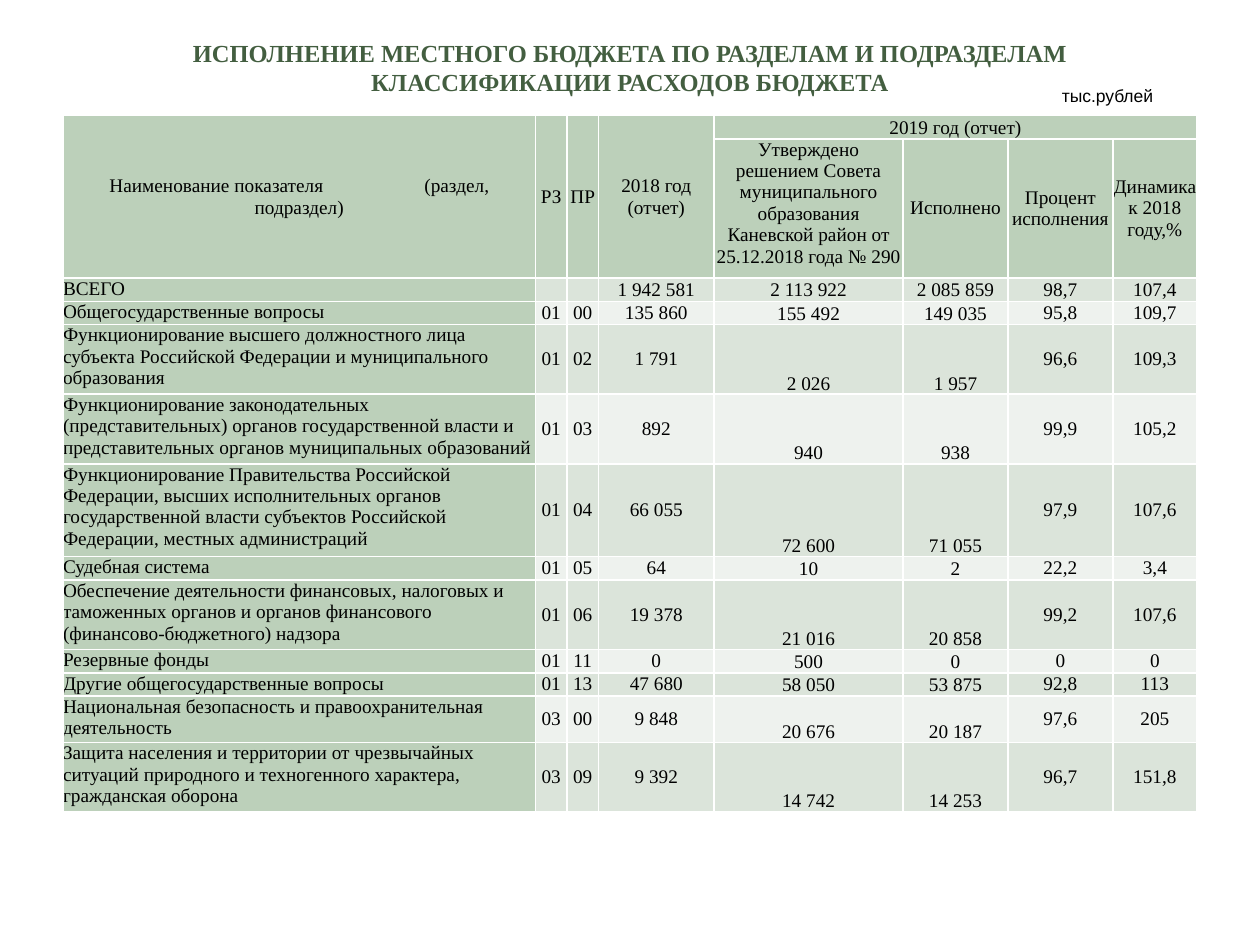
import pptx
import pptx.util
import pptx.dml.color
import pptx.enum.text
import pptx.oxml.ns
import lxml.etree

COLORS = {"title": "435E40", "text": "000000", "head": "BCD0BA",
          "band": "DBE4DA", "light": "EEF2EE", "border": "FFFFFF"}
SERIF, SANS = "Times New Roman", "Arial"
ALIGN = pptx.enum.text.PP_ALIGN
ANCHOR = pptx.enum.text.MSO_ANCHOR
GRID_COLUMNS, GRID_ROWS = 40, 30

COLUMN_SPANS = [15, 1, 1, 3.67, 6, 3.33, 3.33, 2.67]
HEADER_TOP = ["Наименование показателя\t(раздел, подраздел)", "РЗ", "ПР",
              "2018 год (отчет)", "2019 год (отчет)", "", "", ""]
HEADER_SUB = ["", "", "", "",
              "Утверждено решением Совета муниципального образования "
              "Каневской район от 25.12.2018 года № 290",
              "Исполнено", "Процент исполнения", "Динамика к 2018 году,%"]
EXPENSES = [
    ["ВСЕГО", "", "", "1 942 581", "2 113 922", "2 085 859", "98,7", "107,4"],
    ["Общегосударственные вопросы", "01", "00", "135 860", "155 492", "149 035", "95,8", "109,7"],
    ["Функционирование высшего должностного лица субъекта Российской Федерации "
     "и муниципального образования",
     "01", "02", "1 791", "2 026", "1 957", "96,6", "109,3"],
    ["Функционирование законодательных (представительных) органов государственной "
     "власти и представительных органов муниципальных образований",
     "01", "03", "892", "940", "938", "99,9", "105,2"],
    ["Функционирование Правительства Российской Федерации, высших исполнительных "
     "органов государственной власти субъектов Российской Федерации, местных администраций",
     "01", "04", "66 055", "72 600", "71 055", "97,9", "107,6"],
    ["Судебная система", "01", "05", "64", "10", "2", "22,2", "3,4"],
    ["Обеспечение деятельности финансовых, налоговых и таможенных органов "
     "и органов финансового (финансово-бюджетного) надзора",
     "01", "06", "19 378", "21 016", "20 858", "99,2", "107,6"],
    ["Резервные фонды", "01", "11", "0", "500", "0", "0", "0"],
    ["Другие общегосударственные вопросы", "01", "13", "47 680", "58 050", "53 875", "92,8", "113"],
    ["Национальная безопасность и правоохранительная деятельность",
     "03", "00", "9 848", "20 676", "20 187", "97,6", "205"],
    ["Защита населения и территории от чрезвычайных ситуаций природного "
     "и техногенного характера, гражданская оборона",
     "03", "09", "9 392", "14 742", "14 253", "96,7", "151,8"],
]
LINES_PER_ROW = [1, 6, 1, 1, 3, 3, 4, 1, 3, 1, 1, 2, 3]


class BudgetSlide:
    def __init__(self, deck):
        self.slide = deck.slides.add_slide(deck.slide_layouts[6])
        self.column = deck.slide_width / GRID_COLUMNS
        self.row = deck.slide_height / GRID_ROWS

    def place(self, left, top, width, height):
        return [round(length * unit) for length, unit in
                zip((left, top, width, height), (self.column, self.row) * 2)]

    def fill_text(self, frame, text, font, size, color, align, bold=False):
        frame.text = text
        paragraph = frame.paragraphs[0]
        paragraph.alignment = align
        for run in paragraph.runs:
            run.font.name = font
            run.font.size = pptx.util.Pt(size)
            run.font.bold = bold
            run.font.color.rgb = pptx.dml.color.RGBColor.from_string(COLORS[color])
        if not text:
            lxml.etree.SubElement(paragraph._p, pptx.oxml.ns.qn("a:endParaRPr"), sz=str(size * 100))
        return paragraph

    def heading(self, text, *area):
        frame = self.slide.shapes.add_textbox(*self.place(*area)).text_frame
        frame.word_wrap = True
        frame.auto_size = pptx.enum.text.MSO_AUTO_SIZE.SHAPE_TO_FIT_TEXT
        frame.margin_left = frame.margin_right = round(2 * self.column)
        self.fill_text(frame, text, SERIF, 14, "title", ALIGN.CENTER, True)

    def table(self, row_count, column_count, *area):
        grid = self.slide.shapes.add_table(row_count, column_count, *self.place(*area)).table
        grid.first_row = grid.horz_banding = False
        return grid

    def cell(self, cell, text, fill=None, align=ALIGN.CENTER, anchor=ANCHOR.MIDDLE,
             font=SERIF, size=11, margin=0):
        cell.margin_left = cell.margin_right = cell.margin_top = pptx.util.Inches(margin)
        cell.margin_bottom = 0
        cell.vertical_anchor = anchor
        paragraph = self.fill_text(cell.text_frame, text, font, size, "text", align)
        if fill:
            self.borders(cell)
            cell.fill.solid()
            cell.fill.fore_color.rgb = pptx.dml.color.RGBColor.from_string(COLORS[fill])
        else:
            cell.fill.background()
        return paragraph

    def borders(self, cell):
        qn = pptx.oxml.ns.qn
        properties = cell._tc.get_or_add_tcPr()
        for side in ("lnL", "lnR", "lnT", "lnB"):
            line = lxml.etree.SubElement(properties, qn("a:" + side), w=str(pptx.util.Pt(1)))
            paint = lxml.etree.SubElement(line, qn("a:solidFill"))
            lxml.etree.SubElement(paint, qn("a:srgbClr"), val=COLORS["border"])

    def tab_stop(self, paragraph, columns):
        qn = pptx.oxml.ns.qn
        stops = lxml.etree.SubElement(paragraph._p.get_or_add_pPr(), qn("a:tabLst"))
        lxml.etree.SubElement(stops, qn("a:tab"), pos=str(round(columns * self.column)), algn="l")

    def budget(self, left, top, width, height):
        rows = [HEADER_TOP, HEADER_SUB] + EXPENSES
        grid = self.table(len(rows), len(COLUMN_SPANS), left, top, width, height)
        for column, span in zip(grid.columns, COLUMN_SPANS):
            column.width = round(span * self.column)
        line_height = height * self.row / sum(LINES_PER_ROW)
        for row, lines in zip(grid.rows, LINES_PER_ROW):
            row.height = round(lines * line_height)
        for r, values in enumerate(rows):
            for c, value in enumerate(values):
                fill = "head" if r < 2 or c == 0 else ("band", "light")[r % 2]
                align, anchor = ALIGN.CENTER, ANCHOR.MIDDLE
                if r > 1 and c == 0:
                    align, anchor = ALIGN.LEFT, ANCHOR.TOP
                elif (r, c) == (1, 4):
                    anchor = ANCHOR.TOP
                elif (r, c) == (0, 4) or (r > 2 and c in (4, 5)):
                    anchor = ANCHOR.BOTTOM
                paragraph = self.cell(grid.cell(r, c), value, fill, align, anchor)
                if "\t" in value:
                    self.tab_stop(paragraph, 10)
        for c in range(4):
            grid.cell(0, c).merge(grid.cell(1, c))
        grid.cell(0, 4).merge(grid.cell(0, 7))

    def unit(self, text, *area):
        grid = self.table(1, 1, *area)
        self.cell(grid.cell(0, 0), text, None, ALIGN.LEFT, ANCHOR.BOTTOM, SANS, 10, 0.01)


def main():
    deck = pptx.Presentation()
    deck.slide_width = pptx.util.Inches(10)
    deck.slide_height = pptx.util.Inches(7.5)
    report = BudgetSlide(deck)
    report.heading("ИСПОЛНЕНИЕ МЕСТНОГО БЮДЖЕТА ПО РАЗДЕЛАМ И ПОДРАЗДЕЛАМ "
                   "КЛАССИФИКАЦИИ РАСХОДОВ БЮДЖЕТА", 2, 1, 36, 2.28)
    report.budget(2, 3.67, 36, 22.12)
    report.unit("тыс.рублей", 33.67, 2.67, 4.05, 0.72)
    deck.save("out.pptx")


if __name__ == "__main__":
    main()
